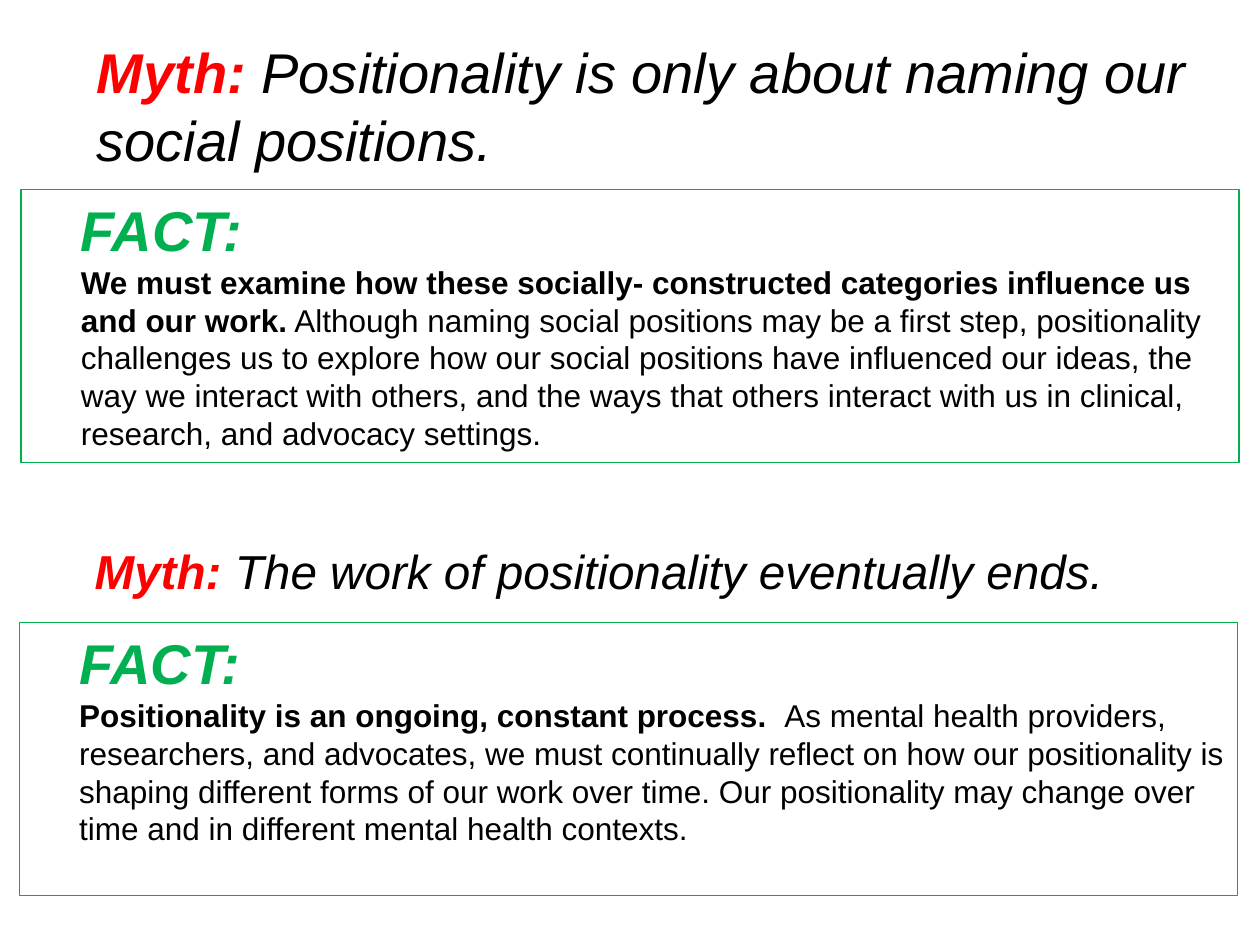
from dataclasses import dataclass

from lxml import etree
from pptx import Presentation
from pptx.dml.color import RGBColor
from pptx.enum.text import MSO_ANCHOR, MSO_AUTO_SIZE, PP_ALIGN
from pptx.oxml.ns import qn
from pptx.util import Pt

TOP = MSO_ANCHOR.TOP
NO_AUTOFIT = MSO_AUTO_SIZE.NONE
LEFT = PP_ALIGN.LEFT

RED, GREEN, BLACK = "FF0000", "00B050", "000000"
TWO_CONTENT_LAYOUT = 3
MYTH_WIDTH = 648
FACT_WIDTH, FACT_HEIGHT = 696, 156
FACT_INDENT = 27


@dataclass
class Myth:
    left: float
    top: float
    height: float
    size: float
    text: str


@dataclass
class Fact:
    left: float
    top: float
    claim: str
    detail: str


MYTHS = [
    Myth(48, 18, 90, 32, " Positionality is only about naming our social positions."),
    Myth(47, 306, 46, 27.2, " The work of positionality eventually ends."),
]
FACTS = [
    Fact(12, 108.2,
         "We must examine how these socially- constructed categories influence us and our work.",
         " Although naming social positions may be a first step, positionality challenges us to "
         "explore how our social positions have influenced our ideas, the way we interact with "
         "others, and the ways that others interact with us in clinical, research, and advocacy "
         "settings."),
    Fact(11, 355.7,
         "Positionality is an ongoing, constant process.\u00a0 ",
         "As mental health providers, researchers, and advocates, we must continually reflect on "
         "how our positionality is shaping different forms of our work over time. Our "
         "positionality may change over time and in different mental health contexts."),
]


def color(value: str) -> RGBColor:
    return RGBColor.from_string(value)


def place(shape, left: float, top: float, width: float, height: float) -> None:
    shape.left, shape.top = Pt(left), Pt(top)
    shape.width, shape.height = Pt(width), Pt(height)
    frame = shape.text_frame
    frame.word_wrap = True
    frame.auto_size = NO_AUTOFIT
    frame.vertical_anchor = TOP


def format_paragraph(paragraph, size: float, italic: bool, indent: float = 0) -> None:
    paragraph.alignment = LEFT
    paragraph.line_spacing = 1.0
    paragraph.space_before = Pt(0)
    paragraph.font.name = "Arial"
    paragraph.font.size = Pt(size)
    paragraph.font.italic = italic
    # Plain indented text without a bullet
    properties = paragraph._p.get_or_add_pPr()
    properties.set("marL", str(Pt(indent)))
    properties.set("indent", "0")
    bullet = etree.Element(qn("a:buNone"))
    properties.find(qn("a:defRPr")).addprevious(bullet)


def add_run(paragraph, text: str, hex_color: str, bold: bool) -> None:
    run = paragraph.add_run()
    run.text = text
    run.font.bold = bold
    run.font.color.rgb = color(hex_color)


def draw_myth(shape, myth: Myth) -> None:
    place(shape, myth.left, myth.top, MYTH_WIDTH, myth.height)
    paragraph = shape.text_frame.paragraphs[0]
    format_paragraph(paragraph, myth.size, italic=True)
    add_run(paragraph, "Myth:", RED, bold=True)
    add_run(paragraph, myth.text, BLACK, bold=False)


def draw_fact(shape, fact: Fact) -> None:
    place(shape, fact.left, fact.top, FACT_WIDTH, FACT_HEIGHT)
    shape.line.color.rgb = color(GREEN)
    shape.line.width = Pt(0.75)
    heading = shape.text_frame.paragraphs[0]
    format_paragraph(heading, 32, italic=True, indent=FACT_INDENT)
    add_run(heading, "FACT:", GREEN, bold=True)
    body = shape.text_frame.add_paragraph()
    format_paragraph(body, 18, italic=False, indent=FACT_INDENT)
    add_run(body, fact.claim, BLACK, bold=True)
    add_run(body, fact.detail, BLACK, bold=False)


def main() -> None:
    presentation = Presentation()
    presentation.slide_width, presentation.slide_height = Pt(720), Pt(540)
    slide = presentation.slides.add_slide(presentation.slide_layouts[TWO_CONTENT_LAYOUT])

    # Myths: the title and a second statement
    second_myth = slide.shapes.add_textbox(0, 0, 0, 0)
    for shape, myth in zip((slide.shapes.title, second_myth), MYTHS):
        draw_myth(shape, myth)

    # Facts: one outlined body for each myth
    for index, fact in enumerate(FACTS, start=1):
        draw_fact(slide.placeholders[index], fact)

    presentation.save("out.pptx")


if __name__ == "__main__":
    main()
